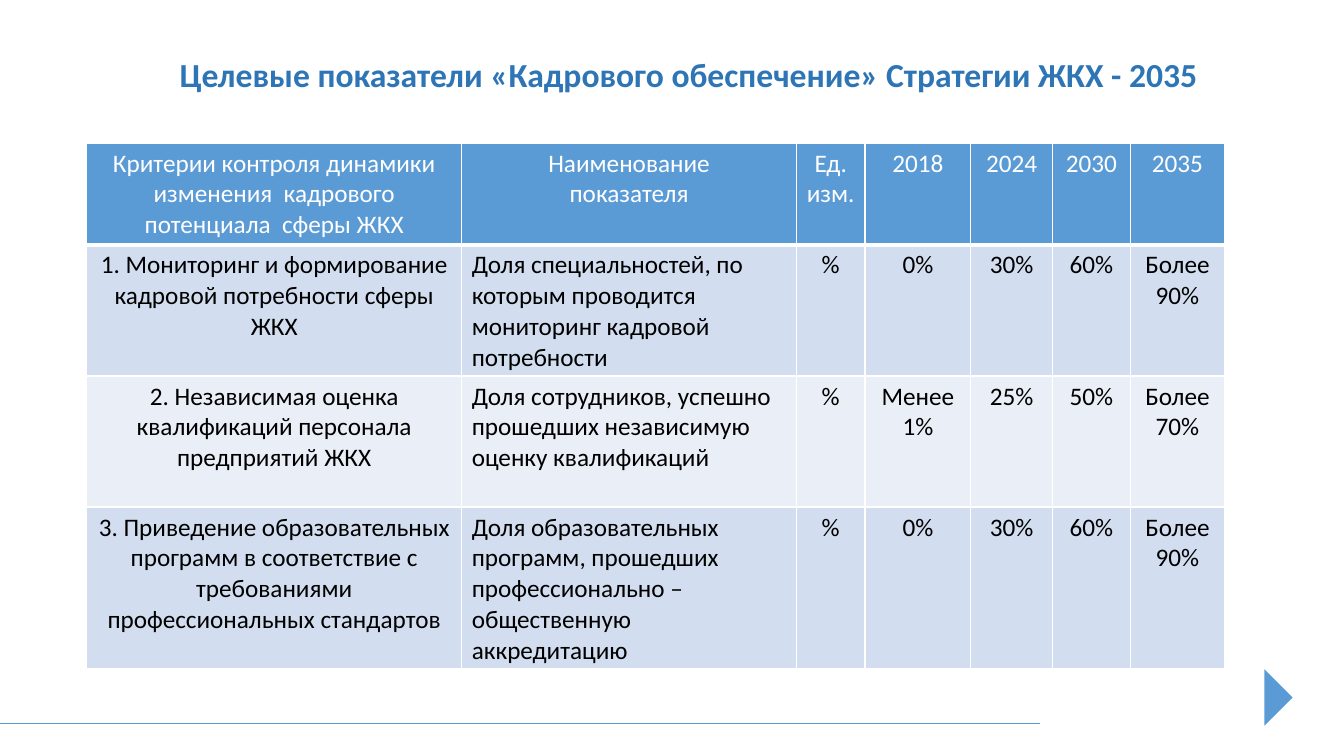
from lxml.etree import SubElement
from pptx import Presentation
from pptx.dml.color import RGBColor
from pptx.enum.shapes import MSO_CONNECTOR, MSO_SHAPE
from pptx.enum.text import MSO_ANCHOR, PP_ALIGN
from pptx.oxml.ns import qn
from pptx.util import Pt

SCALE = 9144
INK = {"blue": "5B9BD5", "title": "2E75B6", "white": "FFFFFF",
       "black": "000000", "odd": "D2DEEF", "even": "EAEFF7"}
WIDTHS = [372, 332, 68, 105, 81, 77, 94]
HEIGHTS = [101, 130, 130, 160]
ROWS = [
    ["Критерии контроля динамики изменения  кадрового потенциала  сферы ЖКХ",
     "Наименование\nпоказателя", "Ед.\nизм.", "2018", "2024", "2030", "2035"],
    ["1. Мониторинг и формирование кадровой потребности сферы ЖКХ",
     "Доля специальностей, по которым проводится мониторинг кадровой потребности",
     "%", "0%", "30%", "60%", "Более\n90%"],
    ["2. Независимая оценка квалификаций персонала предприятий ЖКХ",
     "Доля сотрудников, успешно прошедших независимую оценку квалификаций",
     "%", "Менее\n1%", "25%", "50%", "Более\n70%"],
    ["3. Приведение образовательных программ в соответствие с требованиями "
     "профессиональных стандартов",
     "Доля образовательных программ, прошедших профессионально – "
     "общественную аккредитацию",
     "%", "0%", "30%", "60%", "Более\n90%"],
]


def px(*sizes):
    """Turn px lengths into EMU."""
    return [size * SCALE for size in sizes]


def color(name):
    """Look up a colour by name."""
    return RGBColor.from_string(INK[name])


def write(frame, text, size=18, ink="black", bold=False, align=PP_ALIGN.CENTER):
    """Fill a text frame, one paragraph per line."""
    frame.word_wrap = True
    frame.text = text
    for par in frame.paragraphs:
        par.alignment = align
        font = par.runs[0].font
        font.name, font.size, font.bold = "Calibri", Pt(size), bold
        font.color.rgb = color(ink)


def border(cell, top, bottom):
    """Draw white lines on all sides of a cell."""
    props = cell._tc.get_or_add_tcPr()
    for side, width in zip("LRTB", (1, 1, top, bottom)):
        line = SubElement(props, qn(f"a:ln{side}"), w=str(Pt(width)))
        fill = SubElement(line, qn("a:solidFill"))
        SubElement(fill, qn("a:srgbClr"), val=INK["white"])


class Painter:
    """Draw styled elements on the current slide."""

    def __init__(self, deck):
        """Add a blank slide."""
        self.slide = deck.slides.add_slide(deck.slide_layouts[6])
        self.shapes = self.slide.shapes

    def arrow(self, *box):
        """Add a triangle that points right."""
        shape = self.shapes.add_shape(MSO_SHAPE.ISOSCELES_TRIANGLE, *px(*box))
        shape.rotation = 90
        shape.shadow.inherit = False
        shape.fill.solid()
        shape.fill.fore_color.rgb = color("blue")
        shape.line.fill.background()

    def rule(self, *ends):
        """Add a thin straight line."""
        line = self.shapes.add_connector(MSO_CONNECTOR.STRAIGHT, *px(*ends))
        line.line.color.rgb = color("blue")
        line.line.width = Pt(0.5)
        SubElement(line._element.spPr, qn("a:effectLst"))

    def title(self, text, *box):
        """Add the heading."""
        frame = self.shapes.add_textbox(*px(*box)).text_frame
        frame.vertical_anchor = MSO_ANCHOR.MIDDLE
        write(frame, text, size=24, ink="title", bold=True)

    def table(self, rows, left, top):
        """Add the banded table of targets."""
        box = px(left, top, sum(WIDTHS), sum(HEIGHTS))
        grid = self.shapes.add_table(len(rows), len(WIDTHS), *box).table
        grid.first_row = grid.horz_banding = False
        for col, width in zip(grid.columns, px(*WIDTHS)):
            col.width = width
        for row, height in zip(grid.rows, px(*HEIGHTS)):
            row.height = height
        for r, row in enumerate(rows):
            fill = "blue" if r == 0 else "odd" if r % 2 else "even"
            for c, text in enumerate(row):
                cell = grid.cell(r, c)
                border(cell, 3 if r == 1 else 1, 3 if r == 0 else 1)
                cell.fill.solid()
                cell.fill.fore_color.rgb = color(fill)
                left_side = r > 0 and c == 1
                write(cell.text_frame, text, ink="black" if r else "white",
                      align=PP_ALIGN.LEFT if left_side else PP_ALIGN.CENTER)


def main():
    """Build and save the slide."""
    deck = Presentation()
    deck.slide_width, deck.slide_height = px(1333, 750)
    paint = Painter(deck)
    paint.arrow(1240, 678, 56, 28)
    paint.rule(0, 718, 1032, 718)
    paint.title("Целевые показатели «Кадрового обеспечение» Стратегии ЖКХ - 2035",
                97, 37, 1172, 72)
    paint.table(ROWS, 86, 142)
    deck.save("out.pptx")


if __name__ == "__main__":
    main()
